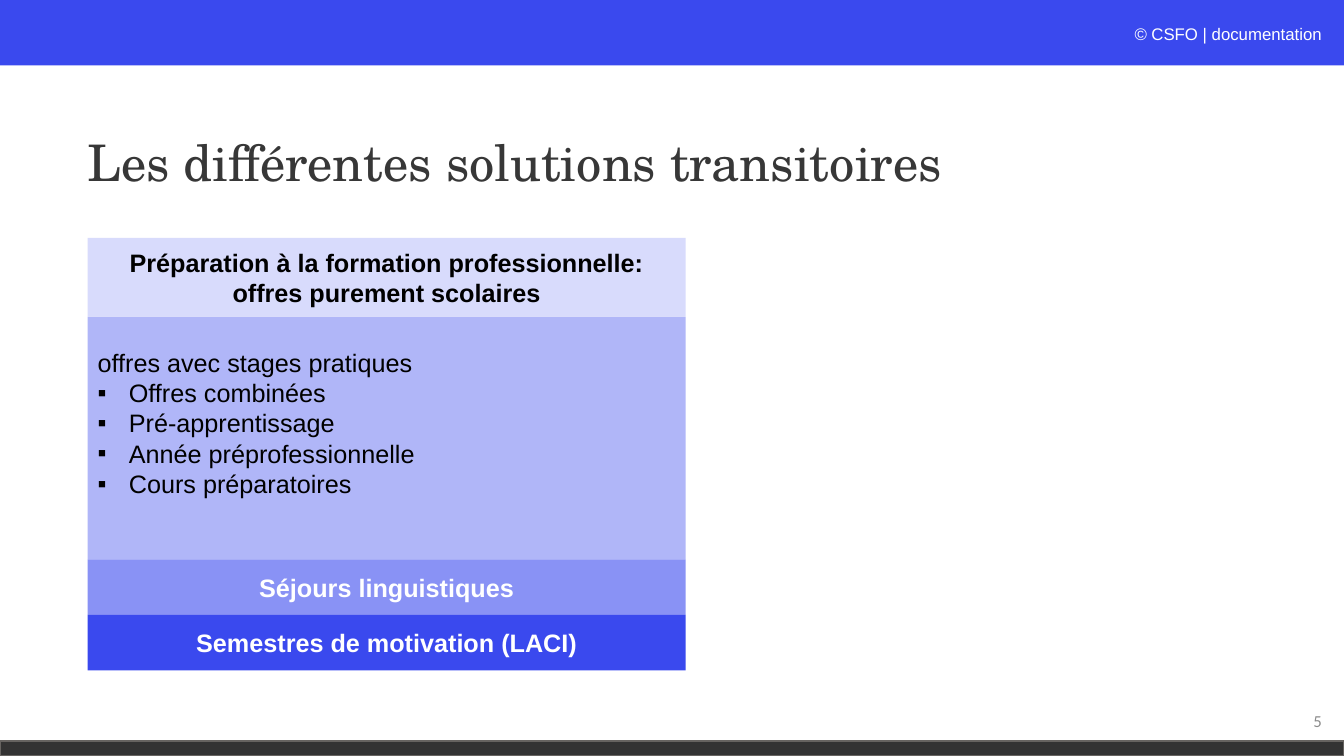
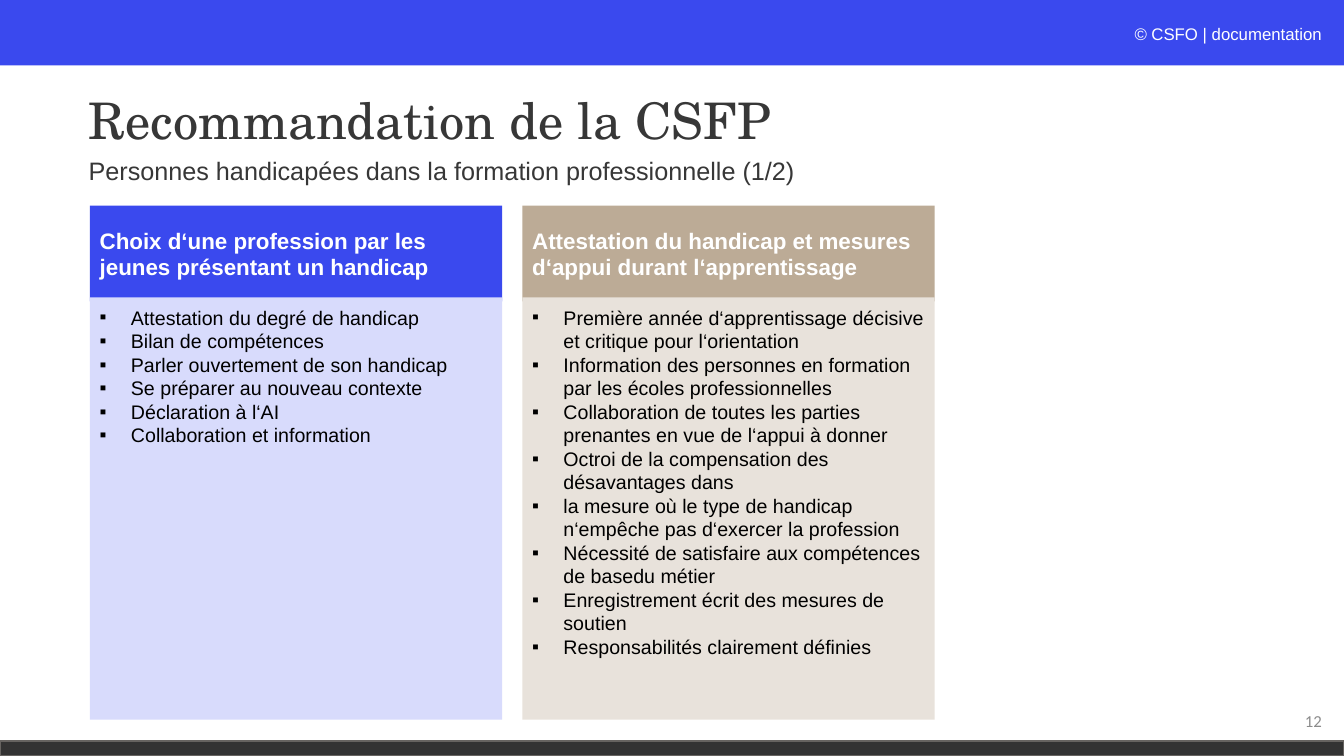
from lxml import etree
from pptx import Presentation
from pptx.dml.color import RGBColor
from pptx.enum import shapes, text
from pptx.oxml import ns
from pptx.util import Inches, Pt

HUES = {
    "blue": "3A49EE", "mid": "8992F5", "soft": "B0B6F8", "pale": "D8DBFC",
    "tan": "BCAB96", "sand": "E8E2DB", "dark": "333333", "edge": "666360",
    "ink": "373737", "grey": "8C8C8C", "black": "000000", "white": "FFFFFF",
}
WIDE, HIGH = 13.33, 7.5
MARK = "▪"
HANG = 0.31
LEFT, MID, RIGHT = text.PP_ALIGN.LEFT, text.PP_ALIGN.CENTER, text.PP_ALIGN.RIGHT
TOP, CENTRE = text.MSO_ANCHOR.TOP, text.MSO_ANCHOR.MIDDLE


def hue(name):
    """Return the colour of that name."""
    return RGBColor.from_string(HUES[name])


def bullet(para):
    """Give a paragraph a square bullet and a hanging indent."""
    props = para._p.get_or_add_pPr()
    props.set("marL", str(Inches(HANG)))
    props.set("indent", str(-Inches(HANG)))
    etree.SubElement(props, ns.qn("a:buFont"), typeface="Arial")
    etree.SubElement(props, ns.qn("a:buChar"), char=MARK)


def write(shape, lines, size=18, font="Arial", color="black", bold=False,
          align=LEFT, anchor=CENTRE, first=None, space=None,
          inset=(0.1, 0.05, 0.1, 0.05)):
    """Write lines in a shape, with bullets from index first onwards."""
    frame = shape.text_frame
    frame.word_wrap = True
    frame.vertical_anchor = anchor
    (frame.margin_left, frame.margin_top,
     frame.margin_right, frame.margin_bottom) = map(Inches, inset)
    for i, line in enumerate(lines):
        para = frame.paragraphs[0] if i == 0 else frame.add_paragraph()
        para.alignment = align
        if first is not None and i >= first:
            bullet(para)
        if space:
            para.line_spacing = space
        parts = [line] if isinstance(line, str) else line
        for part in parts:
            run = para.add_run()
            run.text = part
            run.font.size = Pt(size)
            run.font.name = font
            run.font.bold = bold
            run.font.color.rgb = hue(color)
    return frame


def label(slide, box, lines, **style):
    """Place a text box."""
    shape = slide.shapes.add_textbox(*map(Inches, box))
    return write(shape, lines, **style)


def block(slide, box, fill, lines=(), edge=None, **style):
    """Place a filled rectangle with text."""
    kind = shapes.MSO_SHAPE.RECTANGLE
    shape = slide.shapes.add_shape(kind, *map(Inches, box))
    shape.shadow.inherit = False
    shape.fill.solid()
    shape.fill.fore_color.rgb = hue(fill)
    if edge:
        shape.line.color.rgb = hue(edge)
        shape.line.width = Pt(1)
    else:
        shape.line.fill.background()
    write(shape, lines, **style)


def base(deck, title, box, number):
    """Add a slide with its bands, credit, title and number."""
    slide = deck.slides.add_slide(deck.slide_layouts[6])
    block(slide, (0, 0, WIDE, 0.65), "blue")
    block(slide, (0, 7.35, WIDE, 0.15), "dark", edge="edge")
    credit = label(slide, (8.62, 0.19, 4.59, 0.3),
                   [("© ", "CSFO | documentation")],
                   size=12, color="white", align=RIGHT, anchor=TOP)
    credit.paragraphs[0].runs[0].font.italic = True
    label(slide, box, [title], size=36, font="TeX Gyre Schola",
          color="ink", space=0.9)
    label(slide, (10.21, 6.95, 3, 0.4), [str(number)], size=12,
          font="Calibri", color="grey", align=RIGHT)
    return slide


def stack(slide, left, top, width, rows):
    """Pile blocks of given heights without gaps."""
    for high, fill, lines, style in rows:
        block(slide, (left, top, width, high), fill, lines, **style)
        top += high


def panel(slide, box, fills, head, items):
    """Place a heading over a bulleted list."""
    left, top, width, high = box
    drop = 0.91
    block(slide, (left, top, width, 0.95), fills[0], head,
          size=16, color="white", bold=True)
    block(slide, (left, top + drop, width, high - drop), fills[1], items,
          size=14, anchor=TOP, first=0, inset=(0.1, 0.08, 0.1, 0.05))


def offers(deck):
    """Build the slide of transitional solutions."""
    slide = base(deck, "Les différentes solutions transitoires",
                 (0.77, 0.91, 8.82, 1.45), 5)
    head = {"bold": True, "align": MID}
    light = {**head, "color": "white"}
    stack(slide, 0.87, 2.36, 5.93, [
        (0.78, "pale", ["Préparation à la formation professionnelle:",
                        "offres purement scolaires"], head),
        (2.41, "soft", ["offres avec stages pratiques", "Offres combinées",
                        "Pré-apprentissage", "Année préprofessionnelle",
                        "Cours préparatoires"],
         {"first": 1, "inset": (0.1, 0.05, 0.1, 0.35)}),
        (0.55, "mid", ["Séjours linguistiques"], light),
        (0.55, "blue", ["Semestres de motivation (LACI)"], light),
    ])


def advice(deck):
    """Build the slide of recommendations."""
    slide = base(deck, "Recommandation de la CSFP",
                 (0.78, 0.5, 10.6, 1.45), 12)
    label(slide, (0.78, 1.53, 8.81, 0.54),
          ["Personnes handicapées dans la formation professionnelle (1/2)"],
          color="ink", anchor=TOP, space=0.9)
    panels = [
        (("blue", "pale"),
         ["Choix d‘une profession par les", "jeunes présentant un handicap"],
         ["Attestation du degré de handicap",
          "Bilan de compétences",
          "Parler ouvertement de son handicap",
          "Se préparer au nouveau contexte",
          "Déclaration à l‘AI",
          "Collaboration et information"]),
        (("tan", "sand"),
         ["Attestation du handicap et mesures d‘appui durant l‘apprentissage"],
         ["Première année d‘apprentissage décisive et critique pour "
          "l‘orientation",
          "Information des personnes en formation par les écoles "
          "professionnelles",
          "Collaboration de toutes les parties prenantes en vue de l‘appui "
          "à donner",
          "Octroi de la compensation des désavantages dans",
          "la mesure où le type de handicap n‘empêche pas d‘exercer la "
          "profession",
          "Nécessité de satisfaire aux compétences de basedu métier",
          "Enregistrement écrit des mesures de soutien",
          "Responsabilités clairement définies"]),
    ]
    width, gap = 4.09, 0.2
    for i, (fills, head, items) in enumerate(panels):
        box = (0.89 + i * (width + gap), 2.04, width, 5.1)
        panel(slide, box, fills, head, items)


def main():
    """Build and save the deck."""
    deck = Presentation()
    deck.slide_width, deck.slide_height = Inches(WIDE), Inches(HIGH)
    offers(deck)
    advice(deck)
    deck.save("out.pptx")


if __name__ == "__main__":
    main()
